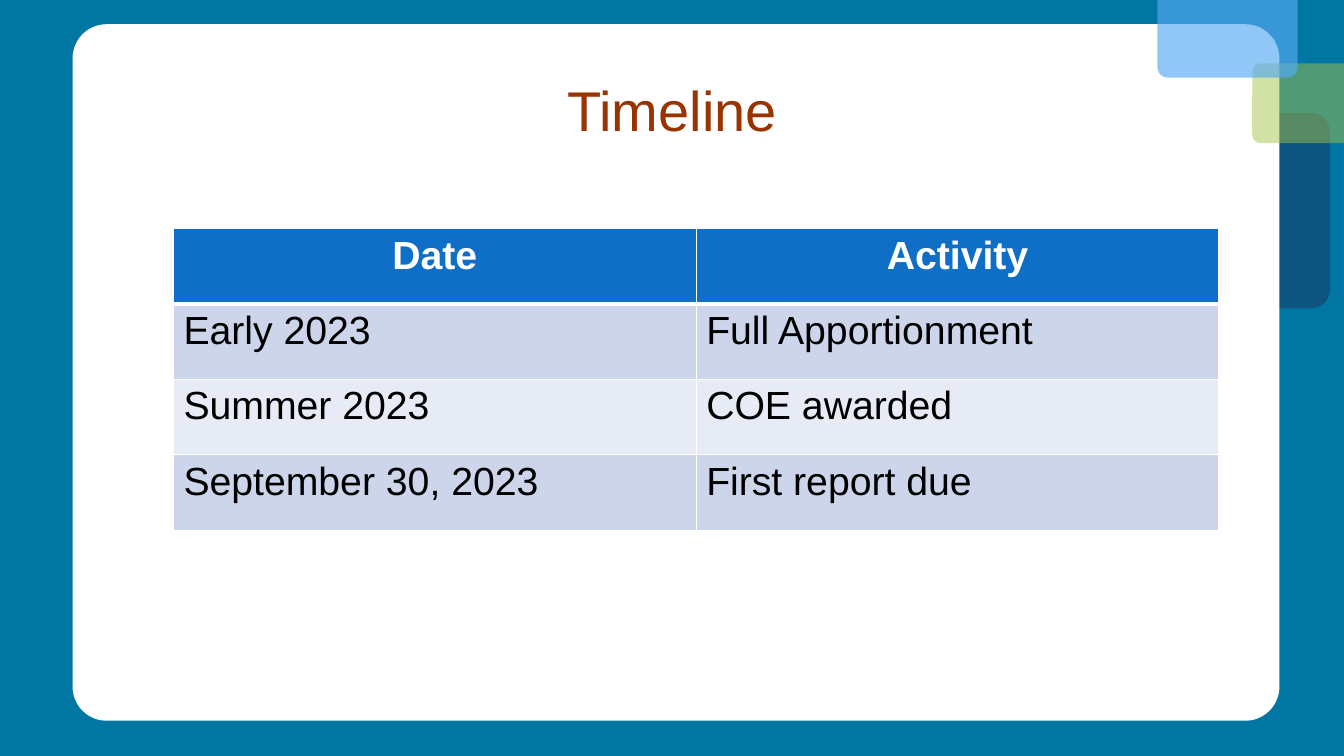
from lxml import etree
from pptx import Presentation
from pptx.dml.color import RGBColor
from pptx.enum.shapes import MSO_SHAPE
from pptx.enum.text import MSO_ANCHOR, PP_ALIGN
from pptx.oxml.ns import qn
from pptx.util import Inches, Pt

ROUNDED = MSO_SHAPE.ROUNDED_RECTANGLE
MIDDLE = MSO_ANCHOR.MIDDLE
CENTER = PP_ALIGN.CENTER
LEFT = PP_ALIGN.LEFT
FONT = "Arial"
COLORS = {
    "background": "0076A3",
    "panel": "FFFFFF",
    "navy": "17406D",
    "green": "A5C249",
    "sky": "56A9F3",
    "title": "993300",
    "header": "0F6FC6",
    "odd_row": "CCD5EA",
    "even_row": "E7EBF5",
    "white": "FFFFFF",
    "black": "000000",
}
ROWS = [
    ("Date", "Activity"),
    ("Early 2023", "Full Apportionment"),
    ("Summer 2023", "COE awarded"),
    ("September 30, 2023", "First report due"),
]


def rgb(name):
    return RGBColor.from_string(COLORS[name])


def add_panel(slide, left, top, width, height, corner, color, opacity=100):
    shape = slide.shapes.add_shape(
        ROUNDED, Inches(left), Inches(top), Inches(width), Inches(height)
    )
    shape.shadow.inherit = False
    shape.adjustments[0] = corner
    shape.fill.solid()
    shape.fill.fore_color.rgb = rgb(color)
    shape.line.fill.background()
    if opacity < 100:
        color_element = shape.fill._xPr.find(qn("a:solidFill"))[0]
        alpha = etree.SubElement(color_element, qn("a:alpha"))
        alpha.set("val", str(opacity * 1000))


def write_text(paragraph, text, size, color, alignment, bold=False):
    paragraph.alignment = alignment
    run = paragraph.add_run()
    run.text = text
    run.font.name = FONT
    run.font.size = Pt(size)
    run.font.bold = bold
    run.font.color.rgb = rgb(color)


def add_title(slide, text):
    box = slide.shapes.add_textbox(
        Inches(1.48), Inches(0.4), Inches(10.37), Inches(1.45)
    )
    frame = box.text_frame
    frame.word_wrap = True
    frame.vertical_anchor = MIDDLE
    frame.margin_left = frame.margin_right = Inches(0.07)
    frame.margin_top = frame.margin_bottom = Inches(0.04)
    paragraph = frame.paragraphs[0]
    paragraph.line_spacing = 0.9
    write_text(paragraph, text, 40, "title", CENTER)


def set_border(cell, side, width):
    properties = cell._tc.get_or_add_tcPr()
    line = etree.SubElement(properties, qn(f"a:ln{side}"), w=str(Pt(width)))
    fill = etree.SubElement(line, qn("a:solidFill"))
    etree.SubElement(fill, qn("a:srgbClr"), val=COLORS["white"])


def style_cell(cell, text, row_index):
    is_header = row_index == 0
    for side in "LRTB":
        thick = (is_header and side == "B") or (row_index == 1 and side == "T")
        set_border(cell, side, 3 if thick else 1)
    cell.fill.solid()
    if is_header:
        fill, color, alignment = "header", "white", CENTER
    else:
        fill = "odd_row" if row_index % 2 else "even_row"
        color, alignment = "black", LEFT
    cell.fill.fore_color.rgb = rgb(fill)
    paragraph = cell.text_frame.paragraphs[0]
    write_text(paragraph, text, 28, color, alignment, is_header)


def add_timeline_table(slide):
    frame = slide.shapes.add_table(
        len(ROWS), len(ROWS[0]),
        Inches(1.72), Inches(2.27), Inches(10.37), Inches(2.99),
    )
    for row_index, row in enumerate(ROWS):
        for column_index, text in enumerate(row):
            style_cell(frame.table.cell(row_index, column_index), text, row_index)


def main():
    presentation = Presentation()
    presentation.slide_width = Inches(13.33)
    presentation.slide_height = Inches(7.5)
    slide = presentation.slides.add_slide(presentation.slide_layouts[6])
    slide.background.fill.solid()
    slide.background.fill.fore_color.rgb = rgb("background")
    add_panel(slide, 10.97, 1.12, 2.22, 1.94, 0.095, "navy", 62)
    add_panel(slide, 0.72, 0.24, 11.97, 6.91, 0.049, "panel")
    add_panel(slide, 12.42, 0.63, 2.22, 0.79, 0.103, "green", 49)
    add_panel(slide, 11.48, -0.53, 1.39, 1.3, 0.079, "sky", 65)
    add_title(slide, "Timeline")
    add_timeline_table(slide)
    presentation.save("out.pptx")


if __name__ == "__main__":
    main()
